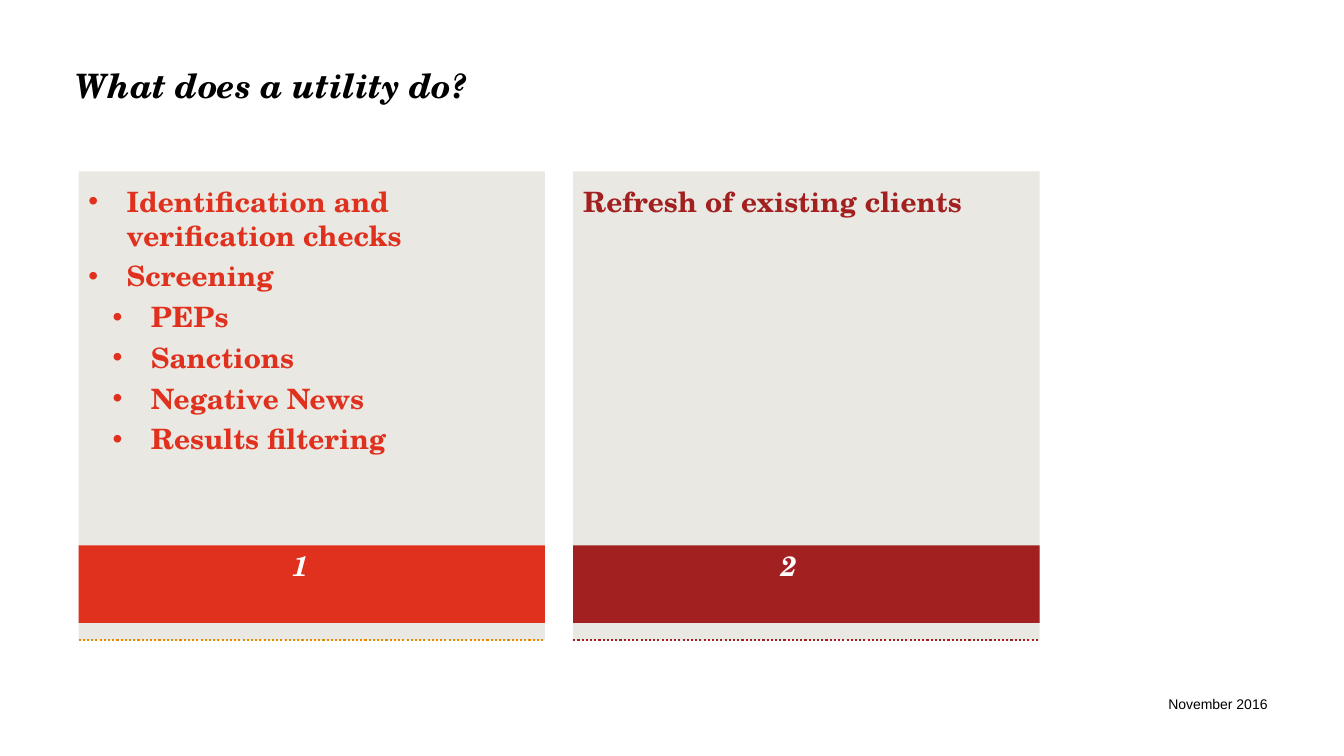
from dataclasses import dataclass

from pptx import Presentation
from pptx.dml.color import RGBColor
from pptx.enum.dml import MSO_LINE_DASH_STYLE as DASH
from pptx.enum.shapes import MSO_CONNECTOR, MSO_SHAPE
from pptx.enum.text import MSO_ANCHOR, PP_ALIGN
from pptx.oxml.ns import qn
from pptx.shapes.autoshape import Shape
from pptx.slide import Slide
from pptx.text.text import TextFrame, _Paragraph as Paragraph
from pptx.util import Inches, Pt

SERIF = "TeX Gyre Schola"
SANS = "Arial"
PANEL_TOP, PANEL_WIDTH, PANEL_HEIGHT = 1.7, 4.63, 4.65
BAND_TOP, BAND_HEIGHT = 5.41, 0.77
HANGING = 0.38
LEVEL_STEP = 0.24


@dataclass(frozen=True)
class Item:
    text: str
    level: int = 0
    bullet: bool = True


@dataclass(frozen=True)
class Panel:
    left: float
    color: str
    line_color: str
    number: str
    number_left: float
    number_width: float
    items: tuple[Item, ...]


PANELS = (
    Panel(0.78, "E0301E", "E68900", "1", 2.9, 0.16, (
        Item("Identification and verification checks"),
        Item("Screening"),
        Item("PEPs", 1),
        Item("Sanctions", 1),
        Item("Negative News", 1),
        Item("Results filtering", 1),
    )),
    Panel(5.69, "A32020", "A32020", "2", 7.75, 0.2, (
        Item("Refresh of existing clients", bullet=False),
    )),
)


def rgb(color: str) -> RGBColor:
    return RGBColor.from_string(color)


def add_run(paragraph: Paragraph, text: str, size: float, color: str,
            font: str = SERIF, bold: bool = True, italic: bool = False) -> None:
    run = paragraph.add_run()
    run.text = text
    run.font.name = font
    run.font.size = Pt(size)
    run.font.bold = bold
    run.font.italic = italic
    run.font.color.rgb = rgb(color)


def set_frame(frame: TextFrame, left: float = 0, top: float = 0,
              right: float = 0, bottom: float = 0, wrap: bool = True) -> None:
    frame.margin_left, frame.margin_top = Inches(left), Inches(top)
    frame.margin_right, frame.margin_bottom = Inches(right), Inches(bottom)
    frame.word_wrap = wrap
    frame.vertical_anchor = MSO_ANCHOR.TOP


def add_text(slide: Slide, left: float, top: float, width: float,
             height: float, wrap: bool = True) -> Paragraph:
    box = slide.shapes.add_textbox(
        Inches(left), Inches(top), Inches(width), Inches(height))
    set_frame(box.text_frame, wrap=wrap)
    return box.text_frame.paragraphs[0]


def add_rectangle(slide: Slide, left: float, top: float, width: float,
                  height: float, color: str) -> Shape:
    shape = slide.shapes.add_shape(
        MSO_SHAPE.RECTANGLE, Inches(left), Inches(top), Inches(width), Inches(height))
    shape.shadow.inherit = False
    shape.fill.solid()
    shape.fill.fore_color.rgb = rgb(color)
    shape.line.fill.background()
    return shape


def add_bullet(paragraph: Paragraph, level: int) -> None:
    paragraph.level = level
    properties = paragraph._p.get_or_add_pPr()
    properties.set("marL", str(Inches(HANGING + level * LEVEL_STEP)))
    properties.set("indent", str(-Inches(HANGING)))
    font = properties.makeelement(qn("a:buFont"), {"typeface": SANS})
    character = properties.makeelement(qn("a:buChar"), {"char": "•"})
    properties.extend((font, character))


def add_items(frame: TextFrame, items: tuple[Item, ...], color: str) -> None:
    set_frame(frame, 0.1, 0.13, 0.1, 0.1)
    for index, item in enumerate(items):
        paragraph = frame.add_paragraph() if index else frame.paragraphs[0]
        paragraph.alignment = PP_ALIGN.LEFT
        paragraph.space_after = Pt(5.1)
        if item.bullet:
            add_bullet(paragraph, item.level)
        add_run(paragraph, item.text, 20, color)


def add_dotted_line(slide: Slide, left: float, top: float, width: float,
                    color: str) -> None:
    line = slide.shapes.add_connector(
        MSO_CONNECTOR.STRAIGHT, Inches(left), Inches(top),
        Inches(left + width), Inches(top))
    line.line.color.rgb = rgb(color)
    line.line.width = Pt(1.5)
    line.line.dash_style = DASH.ROUND_DOT
    properties = line._element.spPr
    properties.append(properties.makeelement(qn("a:effectLst"), {}))


def add_panel(slide: Slide, panel: Panel) -> None:
    card = add_rectangle(
        slide, panel.left, PANEL_TOP, PANEL_WIDTH, PANEL_HEIGHT, "EAE8E2")
    add_items(card.text_frame, panel.items, panel.color)
    add_rectangle(slide, panel.left, BAND_TOP, PANEL_WIDTH, BAND_HEIGHT, panel.color)
    number = add_text(
        slide, panel.number_left, 5.44, panel.number_width, 0.47, wrap=False)
    number.space_after = Pt(8.8)
    add_run(number, panel.number, 20, "FFFFFF", italic=True)
    add_dotted_line(
        slide, panel.left, PANEL_TOP + PANEL_HEIGHT, PANEL_WIDTH, panel.line_color)


def main() -> None:
    presentation = Presentation()
    presentation.slide_width = Inches(13.34)
    presentation.slide_height = Inches(7.5)
    slide = presentation.slides.add_slide(presentation.slide_layouts[6])

    # Title
    title = add_text(slide, 0.75, 0.64, 11.78, 1)
    add_run(title, "What does a utility do?", 24, "000000", italic=True)

    # Numbered panels
    for panel in PANELS:
        add_panel(slide, panel)

    # Date
    date = add_text(slide, 11.16, 6.9, 1.42, 0.39)
    date.alignment = PP_ALIGN.RIGHT
    add_run(date, "November 2016", 10, "000000", font=SANS, bold=False)

    presentation.save("out.pptx")


if __name__ == "__main__":
    main()
